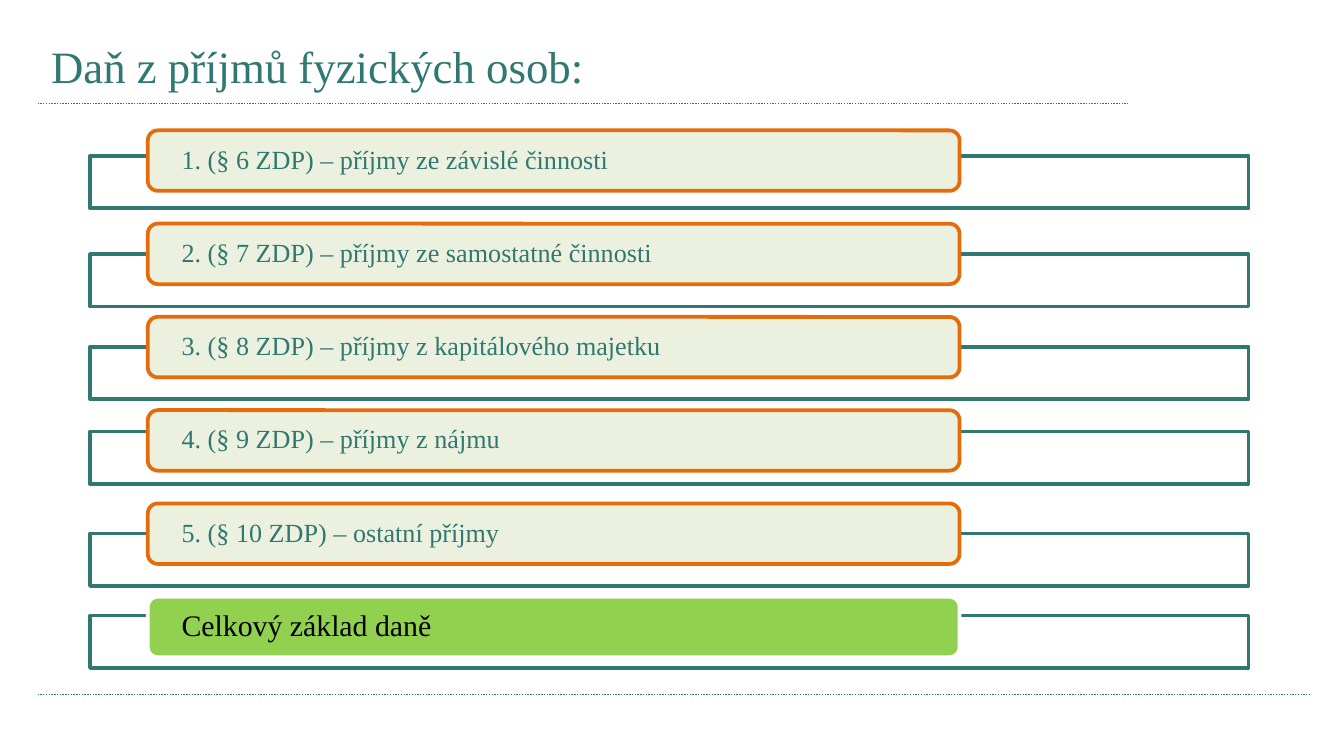
from lxml.etree import SubElement
from pptx import Presentation
from pptx.dml.color import RGBColor
from pptx.enum.dml import MSO_LINE
from pptx.enum.shapes import MSO_CONNECTOR, MSO_SHAPE
from pptx.enum.text import MSO_ANCHOR, PP_ALIGN
from pptx.oxml.ns import qn
from pptx.util import Inches, Pt

HUES = {
    "teal": "307871",
    "white": "FFFFFF",
    "pale": "EBF1DE",
    "orange": "E46C0A",
    "green": "92D050",
    "black": "000000",
}
FACE = "Times New Roman"
INCOME = {"fill": "pale", "edge": "orange", "ink": "teal", "size": 14}
TOTAL = {"fill": "green", "edge": "white", "ink": "black", "size": 16}
ROWS = [
    ("1. (§ 6 ZDP) – příjmy ze závislé činnosti", 1.16, INCOME),
    ("2. (§ 7 ZDP) – příjmy ze samostatné činnosti", 1.89, INCOME),
    ("3. (§ 8 ZDP) – příjmy z kapitálového majetku", 2.58, INCOME),
    ("4. (§ 9 ZDP) – příjmy z nájmu", 3.21, INCOME),
    ("5. (§ 10 ZDP) – ostatní příjmy", 3.97, INCOME),
    ("Celkový základ daně", 4.58, TOTAL),
]
TOP = 0.97
STEP = (4.44 - TOP) / (len(ROWS) - 1)


def hue(name):
    return RGBColor.from_string(HUES[name])


def apply(item, values):
    for key, value in values.items():
        setattr(item, key, value)


def write(shape, text, size, ink, inset):
    frame = shape.text_frame
    apply(frame, {
        "text": text,
        "word_wrap": True,
        "vertical_anchor": MSO_ANCHOR.MIDDLE,
        "margin_left": Inches(inset),
        "margin_right": Inches(inset),
        "margin_top": 0,
        "margin_bottom": 0,
    })
    para = frame.paragraphs[0]
    para.alignment = PP_ALIGN.LEFT
    apply(para.font, {"name": FACE, "size": Pt(size)})
    para.font.color.rgb = hue(ink)
    return para


def add_title(slide, text):
    title = slide.shapes.title
    apply(title, {
        "left": Inches(0.28),
        "top": Inches(0.21),
        "width": Inches(4.96),
        "height": Inches(0.56),
    })
    write(title, text, 24, "teal", 0.1)


def add_rule(slide, right, top):
    rule = slide.shapes.add_connector(
        MSO_CONNECTOR.STRAIGHT, Inches(0.28), Inches(top), Inches(right), Inches(top))
    apply(rule.line, {"width": Pt(0.75), "dash_style": MSO_LINE.ROUND_DOT})
    rule.line.color.rgb = hue("teal")
    SubElement(rule._element.spPr, qn("a:effectLst"))


def add_box(slide, kind, place, fill, edge):
    box = slide.shapes.add_shape(kind, *map(Inches, place))
    box.shadow.inherit = False
    box.fill.solid()
    box.fill.fore_color.rgb = hue(fill)
    box.line.width = Pt(2)
    box.line.color.rgb = hue(edge)
    return box


def add_frame(slide, top):
    box = add_box(slide, MSO_SHAPE.RECTANGLE, (0.67, top, 8.62, 0.39), "white", "teal")
    color = box._element.spPr.find(qn("a:solidFill"))[0]
    SubElement(color, qn("a:alpha"), val="90000")


def add_label(slide, top, text, style):
    box = add_box(slide, MSO_SHAPE.ROUNDED_RECTANGLE, (1.1, top, 6.04, 0.45),
                  style["fill"], style["edge"])
    para = write(box, text, style["size"], style["ink"], 0.23)
    para.line_spacing = 0.9


def main():
    deck = Presentation()
    apply(deck, {"slide_width": Inches(10), "slide_height": Inches(10 * 9 / 16)})
    slide = deck.slides.add_slide(deck.slide_layouts[5])
    add_rule(slide, 8.39, 0.77)
    add_rule(slide, 9.75, 5.17)
    add_title(slide, "Daň z příjmů fyzických osob:")
    for index, (text, top, style) in enumerate(ROWS):
        add_frame(slide, top)
        add_label(slide, TOP + index * STEP, text, style)
    deck.save("out.pptx")


if __name__ == "__main__":
    main()
